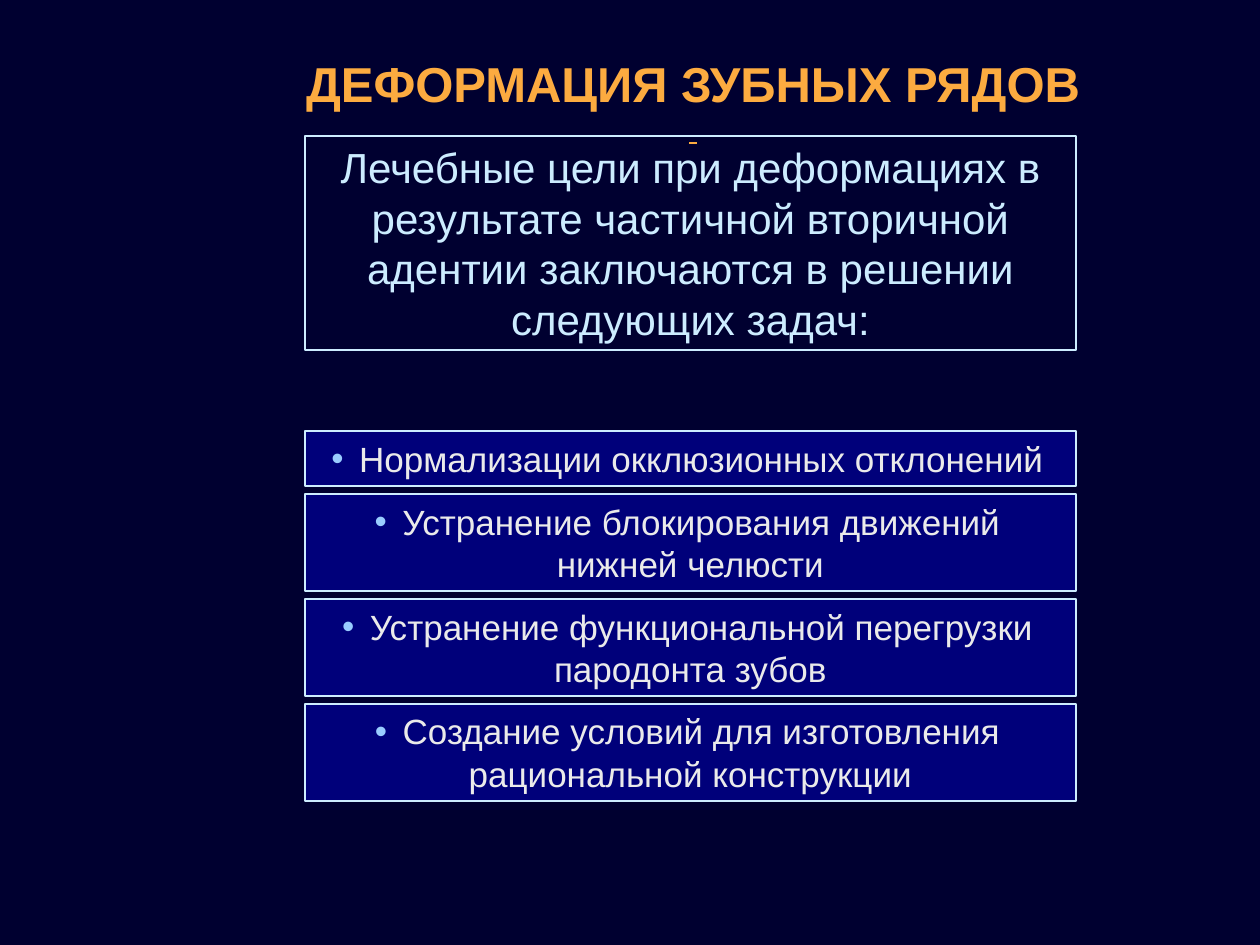
from lxml import etree
from pptx import Presentation
from pptx.dml.color import RGBColor
from pptx.enum.shapes import MSO_SHAPE
from pptx.enum.text import MSO_ANCHOR, PP_ALIGN
from pptx.oxml.ns import qn
from pptx.util import Emu, Pt

RECTANGLE = MSO_SHAPE.RECTANGLE
TOP, MIDDLE = MSO_ANCHOR.TOP, MSO_ANCHOR.MIDDLE
CENTER = PP_ALIGN.CENTER

PX = 914400 // 126
SLIDE_WIDTH, SLIDE_HEIGHT = 1260, 945
PANEL_LEFT, PANEL_WIDTH = 305, 771
TASKS_TOP, TASK_GAP = 431, 8
BULLET_INDENT = -18

NAVY, BLUE = "000030", "00007A"
ORANGE, PALE_BLUE, SKY, LIGHT = "FCAB40", "CCECFF", "99CCFF", "EAEAEA"

TITLE = "ДЕФОРМАЦИЯ ЗУБНЫХ РЯДОВ"
GOALS = ("Лечебные цели при деформациях в результате частичной вторичной "
         "адентии заключаются в решении следующих задач:")
TASKS = [
    ("Нормализации окклюзионных отклонений", 55),
    ("Устранение блокирования движений нижней челюсти", 97),
    ("Устранение функциональной перегрузки пародонта зубов", 97),
    ("Создание условий для изготовления рациональной конструкции", 97),
]


def px(length):
    return Emu(length * PX)


def rgb(color):
    return RGBColor.from_string(color)


def prepare_frame(shape, anchor):
    frame = shape.text_frame
    margins = {"margin_left": px(13), "margin_right": px(13),
               "margin_top": px(6), "margin_bottom": px(6)}
    for name, value in {"word_wrap": True, "vertical_anchor": anchor, **margins}.items():
        setattr(frame, name, value)
    return frame


def add_run(paragraph, text, size, color, **extras):
    paragraph.alignment = CENTER
    run = paragraph.add_run()
    run.text = text
    for name, value in {"name": "Arial", "size": Pt(size), **extras}.items():
        setattr(run.font, name, value)
    run.font.color.rgb = rgb(color)


def add_bullet(paragraph):
    properties = paragraph._p.get_or_add_pPr()
    properties.set("marL", "0")
    properties.set("indent", str(px(BULLET_INDENT)))
    bullet_color = etree.SubElement(properties, qn("a:buClr"))
    etree.SubElement(bullet_color, qn("a:srgbClr"), val=SKY)
    etree.SubElement(properties, qn("a:buFont"), typeface="Arial")
    etree.SubElement(properties, qn("a:buChar"), char="•")


def add_title(slide):
    title = slide.shapes.add_textbox(px(189), px(0), px(1008), px(199))
    frame = prepare_frame(title, MIDDLE)
    add_run(frame.paragraphs[0], TITLE, 28, ORANGE, bold=True)
    add_run(frame.add_paragraph(), " ", 16, ORANGE, bold=True, underline=True)


def add_panel(slide, top, height, fill=None):
    """Add an outlined panel in the common column and return its paragraph."""
    panel = slide.shapes.add_shape(
        RECTANGLE, px(PANEL_LEFT), px(top), px(PANEL_WIDTH), px(height))
    panel.shadow.inherit = False
    if fill:
        panel.fill.solid()
        panel.fill.fore_color.rgb = rgb(fill)
    else:
        panel.fill.background()
    panel.line.color.rgb = rgb(PALE_BLUE)
    panel.line.width = Pt(0.75)
    return prepare_frame(panel, TOP).paragraphs[0]


def add_tasks(slide):
    top = TASKS_TOP
    for task, height in TASKS:
        paragraph = add_panel(slide, top, height, BLUE)
        add_bullet(paragraph)
        add_run(paragraph, " ", 20, SKY)
        add_run(paragraph, task, 20, LIGHT)
        top += height + TASK_GAP


def main():
    presentation = Presentation()
    presentation.slide_width = px(SLIDE_WIDTH)
    presentation.slide_height = px(SLIDE_HEIGHT)
    slide = presentation.slides.add_slide(presentation.slide_layouts[6])
    slide.background.fill.solid()
    slide.background.fill.fore_color.rgb = rgb(NAVY)

    add_title(slide)
    add_run(add_panel(slide, 136, 214), GOALS, 24, PALE_BLUE)
    add_tasks(slide)
    presentation.save("out.pptx")


if __name__ == "__main__":
    main()
